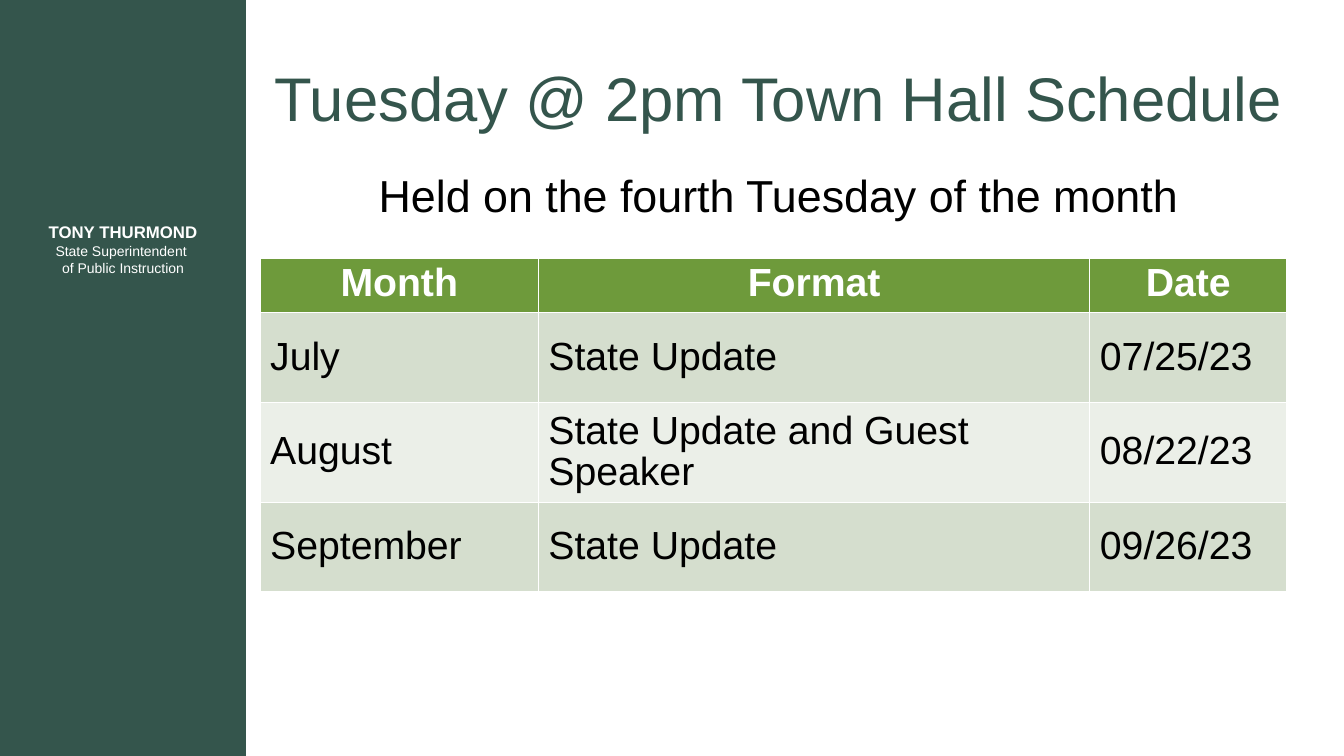
from dataclasses import dataclass

from pptx import Presentation
from pptx.dml.color import RGBColor
from pptx.enum.shapes import MSO_SHAPE
from pptx.enum.text import MSO_ANCHOR, PP_ALIGN
from pptx.util import Inches, Pt


@dataclass(frozen=True)
class Theme:
    font: str = "Arial"
    pine: str = "34554C"
    header: str = "6E9A3B"
    bands: tuple = ("D5DECE", "EBEFE8")
    white: str = "FFFFFF"
    black: str = "000000"
    title: int = 44
    subtitle: int = 32
    table: int = 28
    name: int = 12
    role: int = 10


THEME = Theme()
SCHEDULE = [
    ("Month", "Format", "Date"),
    ("July", "State Update", "07/25/23"),
    ("August", "State Update\u00a0and Guest Speaker", "08/22/23"),
    ("September\u00a0", "State Update", "09/26/23"),
]
COLUMN_WIDTHS = (2.76, 5.47, 1.95)
HEADER_HEIGHT, ROW_HEIGHT = 0.5, 0.89


def style(font, size, color, bold=False):
    font.name, font.size, font.bold = THEME.font, Pt(size), bold
    font.color.rgb = RGBColor.from_string(color)


def paint(fill, color):
    fill.solid()
    fill.fore_color.rgb = RGBColor.from_string(color)


def add_sidebar(slide, left, top, width, height):
    panel = slide.shapes.add_shape(
        MSO_SHAPE.RECTANGLE, Inches(left), Inches(top), Inches(width), Inches(height))
    panel.shadow.inherit = False
    paint(panel.fill, THEME.pine)
    panel.line.fill.background()

    # Superintendent's name and role
    signature = slide.shapes.add_textbox(
        Inches(left + 0.29), Inches(top + 2.09), Inches(width - 0.58), Inches(0.76))
    frame = signature.text_frame
    frame.word_wrap = True
    frame.vertical_anchor = MSO_ANCHOR.MIDDLE
    paragraph = frame.paragraphs[0]
    paragraph.alignment = PP_ALIGN.CENTER
    lines = [("TONY THURMOND", THEME.name, True),
             ("State Superintendent ", THEME.role, False),
             ("of Public Instruction", THEME.role, False)]
    for index, (words, size, bold) in enumerate(lines):
        if index:
            paragraph.add_line_break()
        run = paragraph.add_run()
        run.text = words
        style(run.font, size, THEME.white, bold)


def add_heading(slide, left, top, width):
    title = slide.shapes.title
    title.left, title.top = Inches(left), Inches(top)
    title.width, title.height = Inches(width), Inches(1.25)
    subtitle = slide.shapes.add_textbox(
        Inches(left + 0.2), Inches(top + 1.27), Inches(width - 0.4), Inches(0.51))
    parts = [
        (title, "Tuesday @ 2pm Town Hall Schedule", THEME.title, THEME.pine, MSO_ANCHOR.MIDDLE),
        (subtitle, "Held on the fourth Tuesday of the month", THEME.subtitle, THEME.black,
         MSO_ANCHOR.TOP),
    ]
    for part, words, size, color, anchor in parts:
        frame = part.text_frame
        frame.text = words
        frame.word_wrap = True
        frame.vertical_anchor = anchor
        frame.paragraphs[0].alignment = PP_ALIGN.CENTER
        style(frame.paragraphs[0].font, size, color)


def add_schedule(slide, left, top):
    height = HEADER_HEIGHT + ROW_HEIGHT * (len(SCHEDULE) - 1)
    table = slide.shapes.add_table(
        len(SCHEDULE), len(COLUMN_WIDTHS), Inches(left), Inches(top),
        Inches(sum(COLUMN_WIDTHS)), Inches(height)).table
    for column, width in zip(table.columns, COLUMN_WIDTHS):
        column.width = Inches(width)
    for r, entries in enumerate(SCHEDULE):
        is_header = r == 0
        table.rows[r].height = Inches(HEADER_HEIGHT if is_header else ROW_HEIGHT)
        for c, words in enumerate(entries):
            cell = table.cell(r, c)
            cell.text = words
            cell.vertical_anchor = MSO_ANCHOR.TOP if is_header else MSO_ANCHOR.MIDDLE
            paint(cell.fill, THEME.header if is_header else THEME.bands[(r - 1) % 2])
            paragraph = cell.text_frame.paragraphs[0]
            paragraph.alignment = PP_ALIGN.CENTER if is_header else PP_ALIGN.LEFT
            paragraph.line_spacing = 0.95
            style(paragraph.font, THEME.table,
                  THEME.white if is_header else THEME.black, is_header)


def main():
    prs = Presentation()
    prs.slide_width, prs.slide_height = Inches(13.33), Inches(7.5)
    slide = prs.slides.add_slide(prs.slide_layouts[5])
    add_sidebar(slide, 0, 0, 2.44, 7.5)
    add_heading(slide, 2.58, 0.34, 10.29)
    add_schedule(slide, 2.58, 2.56)
    prs.save("out.pptx")


if __name__ == "__main__":
    main()
